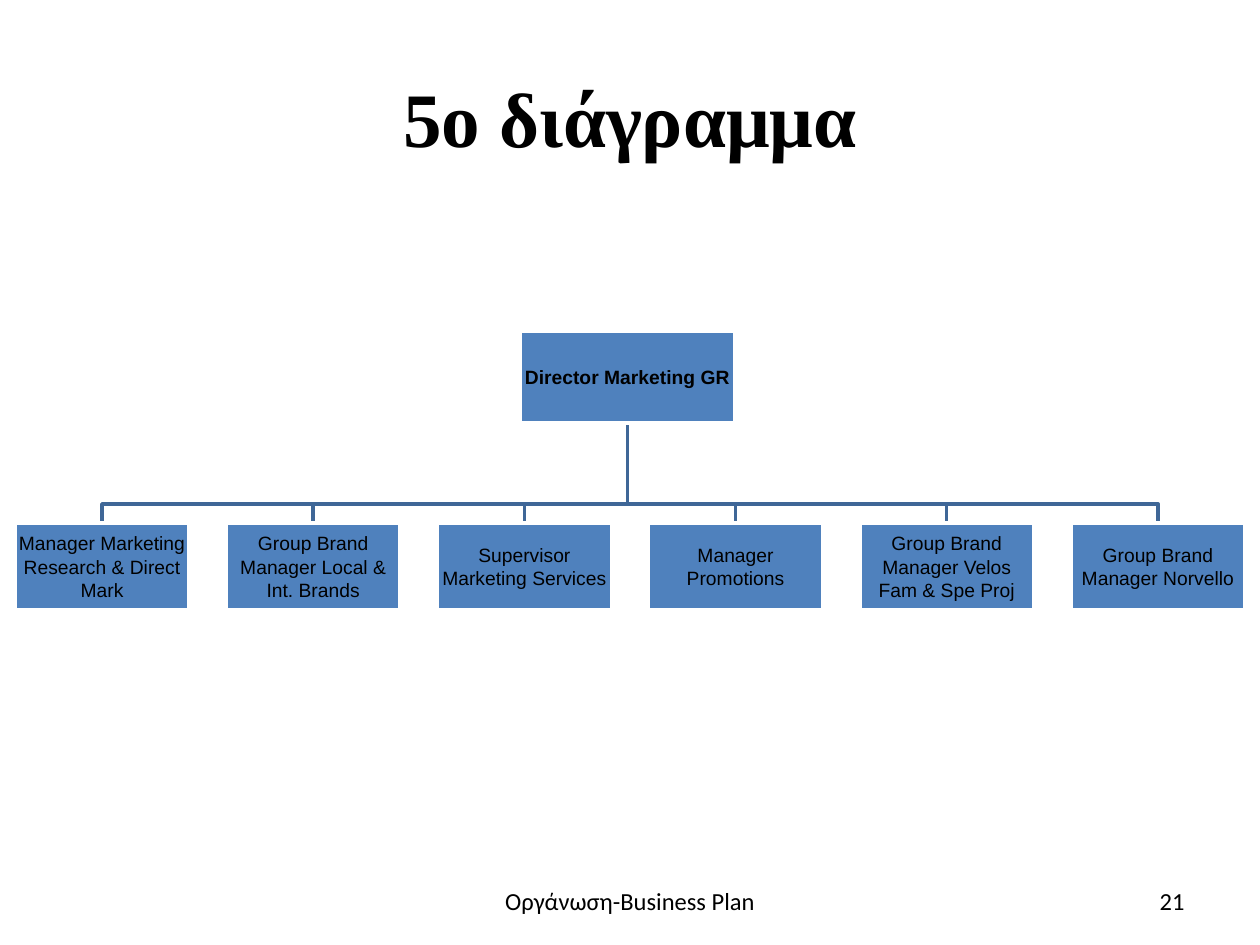
from typing import NamedTuple

from pptx import Presentation
from pptx.dml.color import RGBColor
from pptx.enum.shapes import MSO_SHAPE
from pptx.enum.text import MSO_ANCHOR, PP_ALIGN
from pptx.util import Inches, Pt

BLACK = RGBColor(0x00, 0x00, 0x00)
WHITE = RGBColor(0xFF, 0xFF, 0xFF)
BLUE = RGBColor(0x4F, 0x81, 0xBD)
NAVY = RGBColor(0x3F, 0x67, 0x97)
RECT = MSO_SHAPE.RECTANGLE
MIDDLE = MSO_ANCHOR.MIDDLE
CENTER, RIGHT = PP_ALIGN.CENTER, PP_ALIGN.RIGHT


class Box(NamedTuple):
    left: float
    top: float
    width: float
    height: float

    @property
    def mid(self) -> float:
        return self.left + self.width / 2

    @property
    def base(self) -> float:
        return self.top + self.height

    def lengths(self) -> list:
        return [Inches(v) for v in self]


ROLES = [
    "Manager Marketing Research & Direct Mark",
    "Group Brand Manager Local & Int. Brands",
    "Supervisor Marketing Services",
    "Manager Promotions",
    "Group Brand Manager Velos Fam & Spe Proj",
    "Group Brand Manager Norvello",
]
HEAD = Box(4.13, 2.63, 1.7, 0.73)
STEP = 1.676
STAFF = [Box(0.12 + i * STEP, 4.15, 1.38, 0.69) for i in range(len(ROLES))]
BUS = 4.0  # height of the shared horizontal line


def write(shape, text: str, *, font: str, size: float, bold: bool = False,
          align=CENTER, inset: float | None = None) -> None:
    frame = shape.text_frame
    frame.word_wrap = True
    frame.vertical_anchor = MIDDLE
    if inset is not None:
        frame.margin_left = frame.margin_right = Inches(inset)
        frame.margin_top = frame.margin_bottom = Inches(inset)
    para = frame.paragraphs[0]
    para.alignment = align
    run = para.add_run()
    run.text = text
    run.font.name = font
    run.font.size = Pt(size)
    run.font.bold = bold
    run.font.color.rgb = BLACK


def label(slide, box: Box, text: str, **style) -> None:
    write(slide.shapes.add_textbox(*box.lengths()), text, **style)


def node(slide, box: Box, text: str, bold: bool = False) -> None:
    shape = slide.shapes.add_shape(RECT, *box.lengths())
    shape.shadow.inherit = False
    shape.fill.solid()
    shape.fill.fore_color.rgb = BLUE
    shape.line.color.rgb = WHITE
    shape.line.width = Pt(2)
    write(shape, text, font="Arial", size=11, bold=bold, inset=0.01)


def branch(slide, top: Box, low: Box) -> None:
    """Draw a bent line from the base of one box to the top of another."""
    spots = [(top.mid, top.base), (top.mid, BUS), (low.mid, BUS), (low.mid, low.top)]
    first, *rest = [(Inches(x), Inches(y)) for x, y in spots]
    path = slide.shapes.build_freeform(*first)
    path.add_line_segments(rest, close=False)
    line = path.convert_to_shape()
    line.shadow.inherit = False
    line.fill.background()
    line.line.color.rgb = NAVY
    line.line.width = Pt(2)


def main() -> None:
    deck = Presentation()
    deck.slide_width, deck.slide_height = Inches(10), Inches(7.5)
    slide = deck.slides.add_slide(deck.slide_layouts[6])

    label(slide, Box(0.5, 0.3, 9, 1.25), "5ο διάγραμμα",
          font="Times New Roman", size=44, bold=True)
    for box in STAFF:
        branch(slide, HEAD, box)
    node(slide, HEAD, "Director Marketing GR", bold=True)
    for box, role in zip(STAFF, ROLES):
        node(slide, box, role)
    label(slide, Box(3.34, 6.95, 3.32, 0.4), "Οργάνωση-Business Plan",
          font="Calibri", size=14)
    label(slide, Box(7.17, 6.95, 2.33, 0.4), "21",
          font="Calibri", size=14, align=RIGHT)

    deck.save("out.pptx")


if __name__ == "__main__":
    main()
